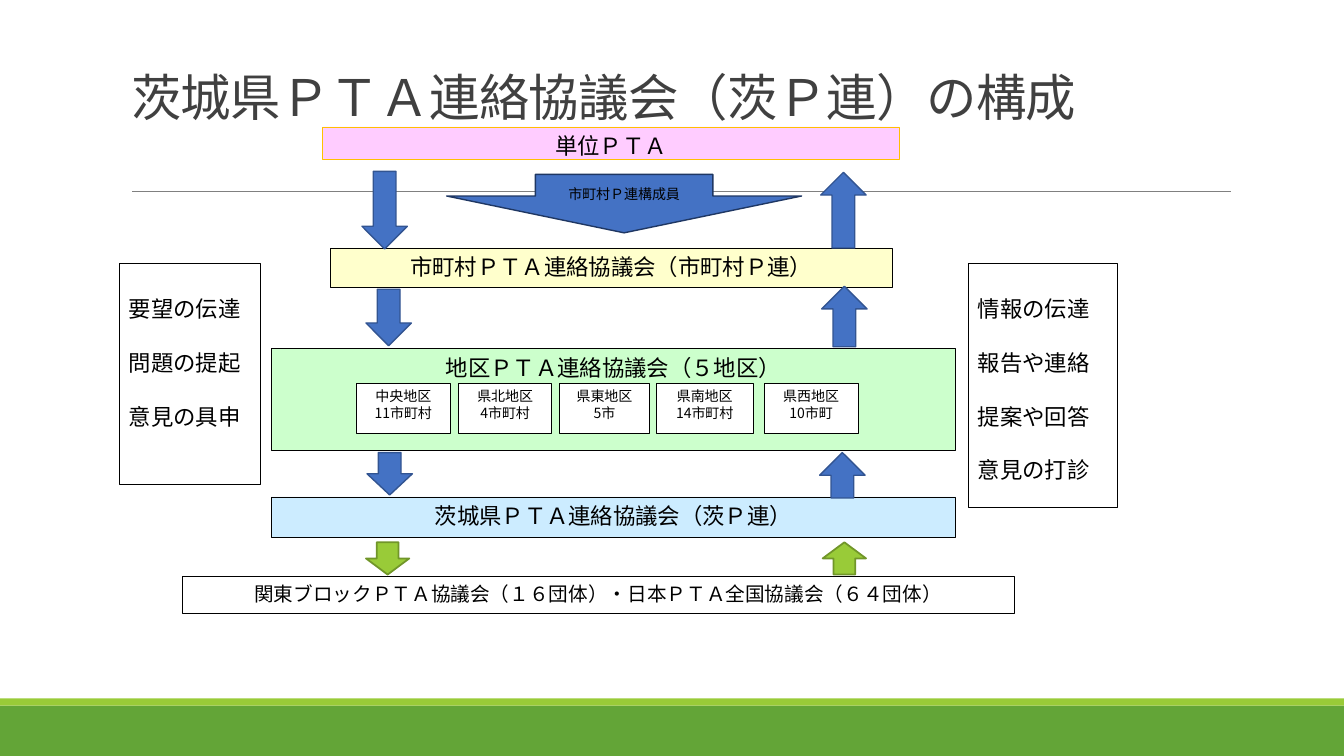
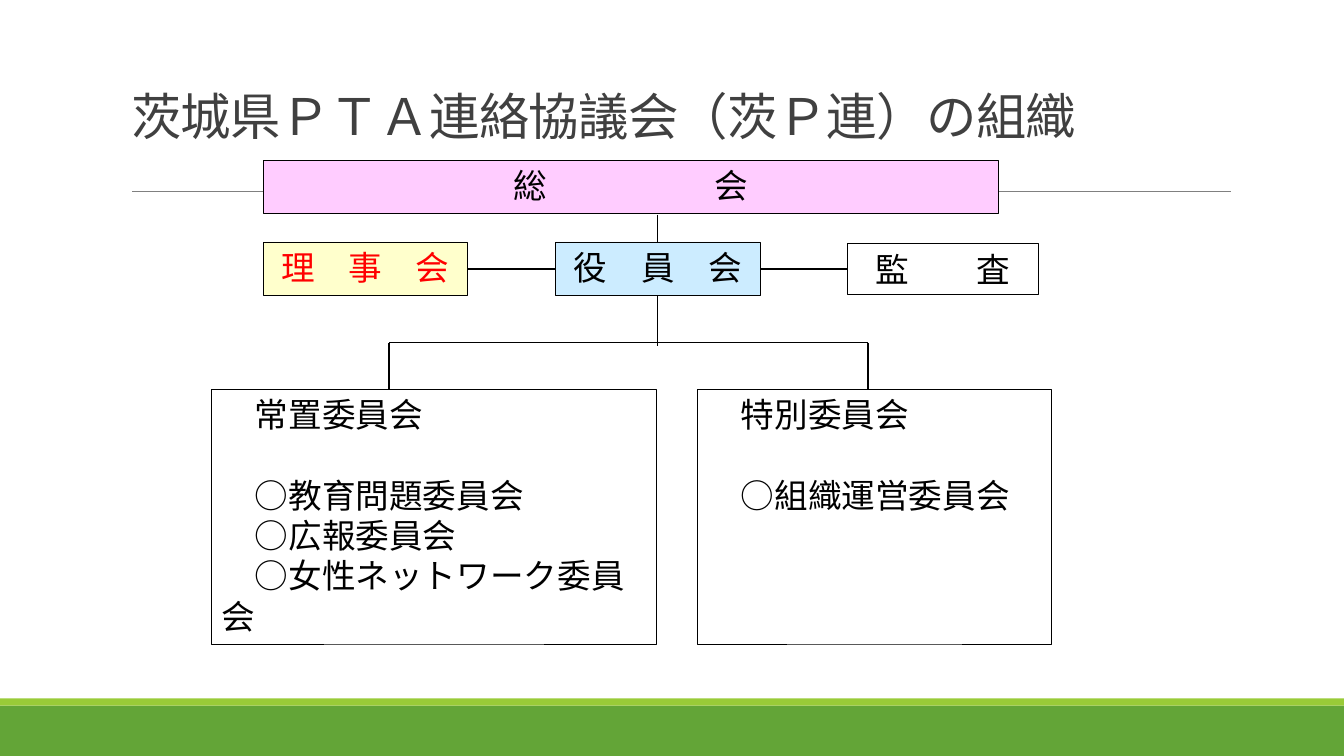
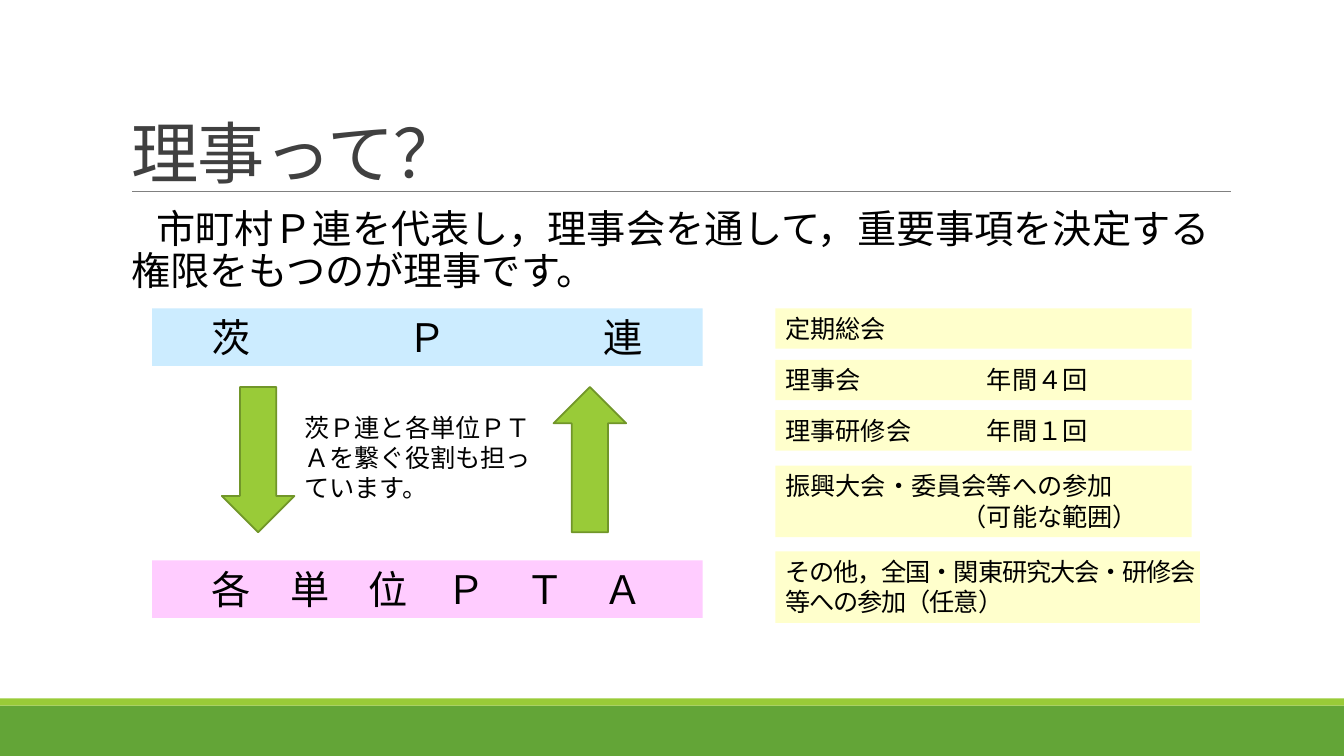
from dataclasses import dataclass

from lxml import etree
from pptx import Presentation
from pptx.dml.color import RGBColor
from pptx.enum.shapes import MSO_CONNECTOR, MSO_SHAPE
from pptx.enum.text import MSO_ANCHOR, MSO_AUTO_SIZE, PP_ALIGN
from pptx.oxml.ns import qn
from pptx.util import Inches, Pt

RECT, DOWN, UP = MSO_SHAPE.RECTANGLE, MSO_SHAPE.DOWN_ARROW, MSO_SHAPE.UP_ARROW
STRAIGHT = MSO_CONNECTOR.STRAIGHT
LEFT, CENTER = PP_ALIGN.LEFT, PP_ALIGN.CENTER
TOP, MIDDLE, BOTTOM = MSO_ANCHOR.TOP, MSO_ANCHOR.MIDDLE, MSO_ANCHOR.BOTTOM
TITLE_ONLY, TITLE_BODY = 5, 1


@dataclass(frozen=True)
class Theme:
    black: str = "000000"
    white: str = "FFFFFF"
    ink: str = "404040"
    rule: str = "808080"
    red: str = "FF0000"
    gold: str = "FFC000"
    green: str = "63A537"
    lime: str = "99CB38"
    moss: str = "719629"
    blue: str = "4472C4"
    navy: str = "325491"
    deep: str = "1F3763"
    pink: str = "FFCCFF"
    cream: str = "FFFFCC"
    mint: str = "CCFFCC"
    sky: str = "CCECFF"
    latin: str = "Calibri"
    serif: str = "Times New Roman"
    asian: str = "Noto Sans CJK JP"
    tiny: int = 10
    small: int = 14
    base: int = 16
    note: int = 18
    large: int = 24
    huge: int = 28
    head: int = 36
    top: int = 48
    lead: float = 1.2


T = Theme()


def rgb(code):
    return RGBColor.from_string(code)


def assign(target, values):
    for name, value in values.items():
        setattr(target, name, value)


class Deck:
    def __init__(self):
        self.show = Presentation()
        assign(self.show, {"slide_width": Inches(13.33), "slide_height": Inches(7.5)})

    def page(self, title, height, size=T.head, layout=TITLE_ONLY):
        """Start a slide with its bands, rule and title."""
        self.slide = self.show.slides.add_slide(self.show.slide_layouts[layout])
        self.box((0, 7, 13.33, 0.5), T.green)
        self.box((0, 6.93, 13.33, 0.07), T.lime)
        self.line((1.31, 1.9), (12.21, 1.9), T.rule, 0.5)
        head = self.slide.shapes.title
        self.place(head, (1.2, 0.31, 11, height))
        self.label(head, [title], size, color=T.ink, anchor=BOTTOM,
                   lead=1.02, track=-0.5, margin_bottom=0)

    def place(self, shape, at):
        names = ("left", "top", "width", "height")
        assign(shape, dict(zip(names, map(Inches, at))))

    def shape(self, kind, at, fill, line=None, width=0.5):
        item = self.slide.shapes.add_shape(kind, *map(Inches, at))
        item.shadow.inherit = False
        if fill:
            item.fill.solid()
            item.fill.fore_color.rgb = rgb(fill)
        else:
            item.fill.background()
        if line:
            item.line.color.rgb = rgb(line)
            item.line.width = Pt(width)
        else:
            item.line.fill.background()
        return item

    def box(self, at, fill, lines=(), size=T.base, line=None, width=0.5, **style):
        item = self.shape(RECT, at, fill, line, width)
        return self.label(item, lines, size, **style) if lines else []

    def arrow(self, kind, at, fill=T.blue, line=T.navy, width=1):
        return self.shape(kind, at, fill, line, width)

    def line(self, start, end, color=T.black, width=1):
        item = self.slide.shapes.add_connector(STRAIGHT, *map(Inches, start + end))
        item.line.color.rgb = rgb(color)
        item.line.width = Pt(width)
        etree.SubElement(item._element.spPr, qn("a:effectLst"))

    def note(self, at, lines, size):
        self.label(self.slide.shapes.add_textbox(*map(Inches, at)), lines, size)

    def label(self, shape, lines, size, color=T.black, font=T.latin, align=LEFT,
              anchor=TOP, lead=T.lead, after=0, spread=0, track=0, **margins):
        """Fill a shape with paragraphs; spread is the gap in characters."""
        frame = shape.text_frame
        assign(frame, {"word_wrap": True, "auto_size": MSO_AUTO_SIZE.NONE,
                       "vertical_anchor": anchor})
        assign(frame, {name: Inches(value) for name, value in margins.items()})
        pars = []
        for text in lines:
            par = frame.add_paragraph() if pars else frame.paragraphs[0]
            assign(par, {"alignment": align, "line_spacing": Pt(lead * size),
                         "space_before": Pt(0), "space_after": Pt(after)})
            if spread:
                self.span(par, text[:-1], size, color, font, spread * size)
                self.span(par, text[-1], size, color, font)
            else:
                self.span(par, text, size, color, font, track)
            pars.append(par)
        return pars

    def span(self, par, text, size, color, font, track=0):
        part = par.add_run()
        part.text = text
        assign(part.font, {"size": Pt(size), "name": font})
        part.font.color.rgb = rgb(color)
        props = part._r.get_or_add_rPr()
        if track:
            props.set("spc", str(round(track * 100)))
        etree.SubElement(props, qn("a:ea"), typeface=T.asian)

    def indent(self, par, left=0.0, first=0.0):
        props = par._p.get_or_add_pPr()
        props.set("marL", str(Inches(left)))
        props.set("indent", str(Inches(first)))

    def tab(self, par, at):
        tabs = etree.SubElement(par._p.get_or_add_pPr(), qn("a:tabLst"))
        etree.SubElement(tabs, qn("a:tab"), pos=str(Inches(at)), algn="l")


def levels(deck):
    deck.page("茨城県ＰＴＡ連絡協議会（茨Ｐ連）の構成", 0.95)
    framed = {"line": T.black, "font": T.asian}
    for at, fill, text, size, line in (
        ((1.81, 5.72, 8.25, 0.37), T.white,
         "関東ブロックＰＴＡ協議会（１６団体）・日本ＰＴＡ全国協議会（６４団体）", T.small, T.black),
        ((3.2, 1.26, 5.72, 0.32), T.pink, "単位ＰＴＡ", T.base, T.gold),
        ((3.28, 2.46, 5.57, 0.39), T.cream,
         "市町村ＰＴＡ連絡協議会（市町村Ｐ連）", T.base, T.black),
        ((2.69, 3.46, 6.79, 1.01), T.mint, "地区ＰＴＡ連絡協議会（５地区）", T.base, T.black),
        ((2.69, 4.93, 6.79, 0.4), T.sky, "茨城県ＰＴＡ連絡協議会（茨Ｐ連）", T.base, T.black),
    ):
        deck.box(at, fill, [text], size, line=line, font=T.asian, align=CENTER)

    for left, width, name, count in (
        (3.53, 0.94, "中央地区", "11市町村"),
        (4.55, 0.92, "県北地区", "4市町村"),
        (5.55, 0.89, "県東地区", "5市"),
        (6.51, 0.96, "県南地区", "14市町村"),
        (7.58, 0.93, "県西地区", "10市町"),
    ):
        deck.box((left, 3.8, width, 0.5), T.white, [name, count], T.tiny,
                 align=CENTER, **framed)

    for kind, left, top, height in (
        (DOWN, 3.59, 1.7, 0.77), (UP, 8.14, 1.71, 0.75),
        (DOWN, 3.63, 2.87, 0.56), (UP, 8.15, 2.84, 0.6),
        (DOWN, 3.64, 4.49, 0.42), (UP, 8.13, 4.49, 0.45),
    ):
        deck.arrow(kind, (left, top, 0.45, height))
    for kind, left in ((DOWN, 3.63), (UP, 8.16)):
        deck.arrow(kind, (left, 5.38, 0.43, 0.32), T.lime, T.moss, 1.25)

    wide = deck.arrow(DOWN, (4.43, 1.73, 3.52, 0.58), line=T.deep)
    wide.adjustments[0], wide.adjustments[1] = 0.5, 0.63
    deck.label(wide, ["市町村Ｐ連構成員"], T.tiny, font=T.asian, align=CENTER, anchor=MIDDLE)

    for at, lines in (
        ((1.18, 2.61, 1.4, 2.2), ["要望の伝達", "問題の提起", "意見の具申"]),
        ((9.6, 2.61, 1.48, 2.42), ["情報の伝達", "報告や連絡", "提案や回答", "意見の打診"]),
    ):
        deck.box(at, T.white, lines, after=19.2, margin_top=0.32, **framed)


def bodies(deck):
    deck.page("茨城県ＰＴＡ連絡協議会（茨Ｐ連）の組織", 1.13)
    for at, fill, text, gap, color, width in (
        ((2.61, 1.59, 7.29, 0.53), T.pink, "総会", 5, T.black, 0.5),
        ((2.61, 2.4, 2.03, 0.53), T.cream, "理事会", 1, T.red, 0.5),
        ((5.51, 2.4, 2.03, 0.53), T.sky, "役員会", 1, T.black, 0.5),
        ((8.41, 2.42, 1.89, 0.5), None, "監査", 2, T.black, 0.75),
    ):
        deck.box(at, fill, [text], T.large, line=T.black, width=width, color=color,
                 font=T.asian, align=CENTER, spread=gap)

    for left, width, lines in (
        (2.1, 4.41, ["常置委員会", "○教育問題委員会", "○広報委員会", "○女性ネットワーク委員会"]),
        (6.92, 3.51, ["特別委員会", "○組織運営委員会"]),
    ):
        pars = deck.box((left, 3.86, width, 2.53), T.white, lines, T.large,
                        line=T.black, font=T.asian)
        pars[0].space_after = Pt(T.lead * T.large)
        for par in pars:
            deck.indent(par, first=0.33)

    for start, end in (
        ((6.52, 2.13), (6.52, 2.4)), ((4.64, 2.67), (5.51, 2.67)),
        ((7.54, 2.67), (8.41, 2.67)), ((6.52, 2.94), (6.52, 3.43)),
        ((3.86, 3.4), (8.61, 3.4)), ((3.86, 3.4), (3.86, 3.86)),
        ((8.61, 3.4), (8.61, 3.86)),
    ):
        deck.line(start, end)


def role(deck):
    deck.page("理事って？", 1.59, T.top, TITLE_BODY)
    body = deck.slide.placeholders[1]
    deck.place(body, (1.2, 2.02, 11, 4.4))
    lead = deck.label(
        body, ["市町村Ｐ連を代表し，理事会を通して，重要事項を決定する権限をもつのが理事です。"],
        T.huge, font=T.serif, lead=1.08, margin_left=0, margin_right=0)[0]
    deck.indent(lead, 0.1, 0.25)
    etree.SubElement(lead._p.get_or_add_pPr(), qn("a:buNone"))

    for top, fill, text, gap in (
        (3.06, T.sky, "茨Ｐ連", 4), (5.56, T.pink, "各単位ＰＴＡ", 1),
    ):
        deck.box((1.51, top, 5.46, 0.57), fill, [text], T.huge, align=CENTER, spread=gap)
    for kind, left in ((DOWN, 2.2), (UP, 5.49)):
        deck.arrow(kind, (left, 3.84, 0.72, 1.44), T.lime, T.moss, 1.25)
    deck.note((2.92, 4.04, 2.49, 1.01),
              ["茨Ｐ連と各単位ＰＴＡを繋ぐ役割も担っています。"], T.note)

    for top, text in (
        (3.06, "定期総会"), (3.57, "理事会\t年間４回"), (4.07, "理事研修会\t年間１回"),
    ):
        par = deck.box((7.69, top, 4.13, 0.4), T.cream, [text], T.note)[0]
        if "\t" in text:
            deck.tab(par, 2)
    join = deck.box((7.69, 4.62, 4.13, 0.71), T.cream,
                    ["振興大会・委員会等への参加", "（可能な範囲）"], T.note)
    deck.indent(join[1], 1.75)
    deck.box((7.69, 5.47, 4.21, 0.71), T.cream,
             ["その他，全国・関東研究大会・研修会", "等への参加（任意）"], T.note,
             track=-0.8, margin_right=0)


def main():
    deck = Deck()
    for build in (levels, bodies, role):
        build(deck)
    deck.show.save("out.pptx")


if __name__ == "__main__":
    main()
